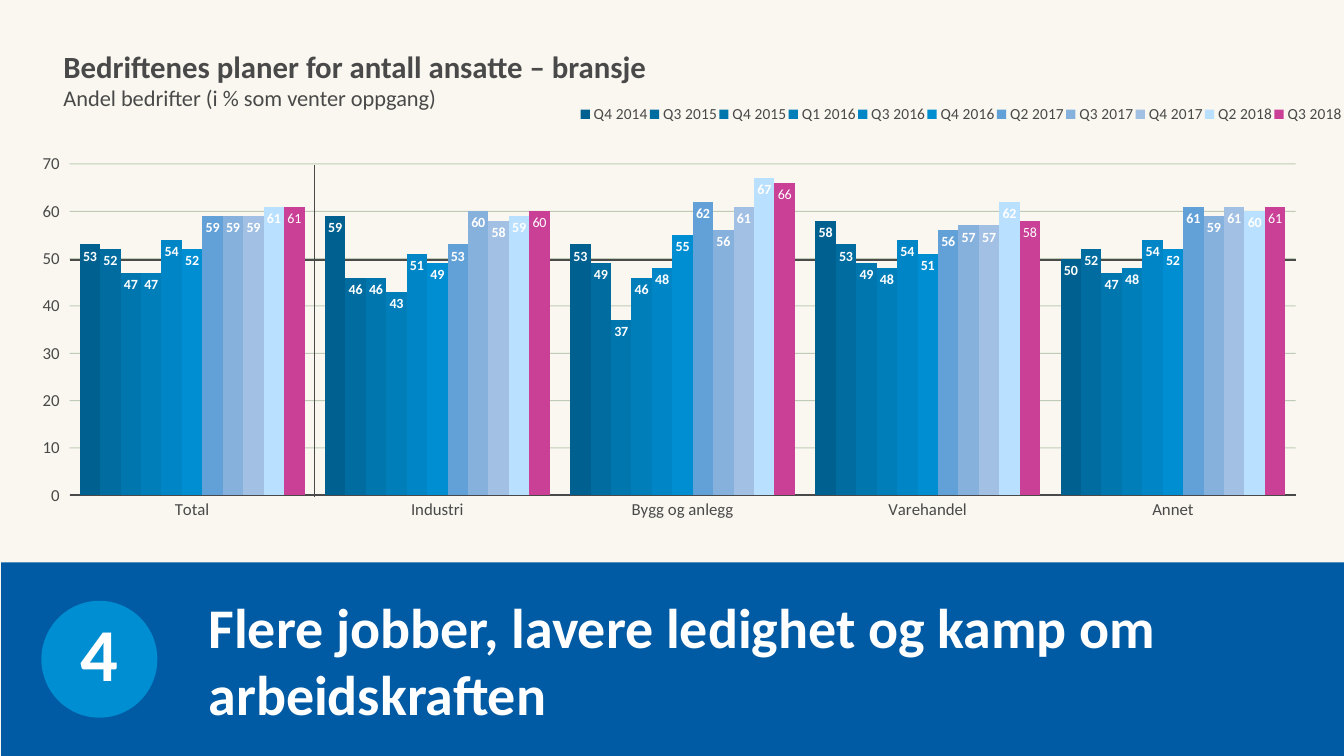
from lxml import etree
from pptx import Presentation
from pptx.chart.data import CategoryChartData
from pptx.dml.color import RGBColor
from pptx.enum import chart as ce, shapes, text
from pptx.oxml import parse_xml
from pptx.oxml.ns import qn
from pptx.util import Inches, Pt

WIDE, HIGH = Inches(13.33), Inches(7.5)
FONT = "Calibri"
HUES = {"paper": "F9F7EF", "band": "005AA4", "disc": "008ED2",
        "ink": "494949", "grid": "86A17F", "white": "FFFFFF"}
CATS = ["Total", "Industri", "Bygg og anlegg", "Varehandel", "Annet"]
QUARTERS = [
    ("Q4 2014", "00608F", (53, 59, 53, 58, 50)),
    ("Q3 2015", "006C9F", (52, 46, 49, 53, 52)),
    ("Q4 2015", "0076AE", (47, 46, 37, 49, 47)),
    ("Q1 2016", "007EBA", (47, 43, 46, 48, 48)),
    ("Q3 2016", "0086C7", (54, 51, 48, 54, 54)),
    ("Q4 2016", "008ED2", (52, 49, 55, 51, 52)),
    ("Q2 2017", "62A0D8", (59, 53, 62, 56, 61)),
    ("Q3 2017", "87B1DD", (59, 60, 56, 57, 59)),
    ("Q4 2017", "A2C0E3", (59, 58, 61, 57, 61)),
    ("Q2 2018", "BAE0FF", (61, 59, 67, 62, 60)),
    ("Q3 2018", "C94096", (61, 60, 66, 58, 61)),
]


def area(*shares):
    """Turn x, y pairs given in percent of the slide into lengths."""
    return [round(s * side / 100) for s, side in zip(shares, (WIDE, HIGH) * 2)]


def put(item, **values):
    for key, value in values.items():
        setattr(item, key, value)


def style(font, size, hue, bold=False):
    put(font, name=FONT, size=Pt(size), bold=bold)
    font.color.rgb = RGBColor.from_string(HUES[hue])


def paint(fill, hue):
    fill.solid()
    fill.fore_color.rgb = RGBColor.from_string(hue)


def stroke(line, hue, width):
    paint(line.fill, HUES[hue])
    line.width = Pt(width)


def block(slide, kind, hue, box):
    shape = slide.shapes.add_shape(kind, *area(*box))
    shape.shadow.inherit = False
    paint(shape.fill, HUES[hue])
    shape.line.fill.background()
    return shape


def rule(slide, ends):
    line = slide.shapes.add_connector(shapes.MSO_CONNECTOR.STRAIGHT, *area(*ends))
    stroke(line.line, "ink", 1.25)
    etree.SubElement(line._element.spPr, qn("a:effectLst"))


def write(frame, lines, hue, **values):
    """Fill a text frame with (words, size, bold) lines."""
    put(frame, word_wrap=True, **values)
    for i, (words, size, bold) in enumerate(lines):
        para = frame.add_paragraph() if i else frame.paragraphs[0]
        run = para.add_run()
        run.text = words
        style(run.font, size, hue, bold)


def label(slide, box, lines, hue, anchor):
    frame = slide.shapes.add_textbox(*area(*box)).text_frame
    write(frame, lines, hue, vertical_anchor=anchor,
          auto_size=text.MSO_AUTO_SIZE.SHAPE_TO_FIT_TEXT)


def place(host, box, inner=False):
    """Give a plot area or legend a fixed place in shares of the chart."""
    for old in host.findall(qn("c:layout")):
        host.remove(old)
    marks = [("layoutTarget", "inner")] if inner else []
    marks += [("xMode", "edge"), ("yMode", "edge"), *zip("xywh", box)]
    body = "".join(f'<c:{tag} val="{val}"/>' for tag, val in marks)
    space = "http://schemas.openxmlformats.org/drawingml/2006/chart"
    layout = parse_xml(f'<c:layout xmlns:c="{space}"><c:manualLayout>{body}'
                       '</c:manualLayout></c:layout>')
    host.insert(0 if inner else 1, layout)


def axes(chart):
    cat, val = chart.category_axis, chart.value_axis
    for axis in (cat, val):
        style(axis.tick_labels.font, 12, "ink")
    cat.major_tick_mark = ce.XL_TICK_MARK.NONE
    stroke(cat.format.line, "ink", 1.25)
    put(val, minimum_scale=0, maximum_scale=70, major_unit=10,
        major_tick_mark=ce.XL_TICK_MARK.OUTSIDE, has_major_gridlines=True)
    val.format.line.fill.background()
    grid = val.major_gridlines.format.line
    stroke(grid, "grid", 0.75)
    hue = val.major_gridlines._xAx.find(".//" + qn("c:majorGridlines")).find(
        ".//" + qn("a:srgbClr"))
    etree.SubElement(hue, qn("a:alpha"), val="50000")


def bars(slide, box):
    data = CategoryChartData(number_format="0")
    data.categories = CATS
    for name, _, values in QUARTERS:
        data.add_series(name, values)
    chart = slide.shapes.add_chart(
        ce.XL_CHART_TYPE.COLUMN_CLUSTERED, *area(*box), data).chart
    put(chart, has_title=False, has_legend=True)
    style(chart.font, 10, "band")
    axes(chart)
    plot = chart.plots[0]
    put(plot, gap_width=100, overlap=0, vary_by_categories=False)
    for series, (name, hue, _) in zip(plot.series, QUARTERS):
        paint(series.format.fill, hue)
        tags = series.data_labels
        put(tags, show_value=True, position=ce.XL_LABEL_POSITION.INSIDE_END)
        style(tags.font, 10, "white", name != QUARTERS[-1][0])
    put(chart.legend, position=ce.XL_LEGEND_POSITION.BOTTOM, include_in_layout=False)
    style(chart.legend.font, 11, "ink")
    place(chart.legend._element, (0.43, 0.16, 0.57, 0.06))
    place(chart._chartSpace.chart.plotArea, (0.051, 0.28, 0.913, 0.599), True)


def main():
    deck = Presentation()
    put(deck, slide_width=WIDE, slide_height=HIGH)
    slide = deck.slides.add_slide(deck.slide_layouts[6])
    paint(slide.background.fill, HUES["paper"])
    kind, anchor = shapes.MSO_SHAPE, text.MSO_ANCHOR

    block(slide, kind.RECTANGLE, "band", (0.08, 74.4, 100.5, 25.6))
    rule(slide, (5.18, 34.4, 96.4, 34.4))
    bars(slide, (0.08, 1.2, 99.92, 73.2))
    rule(slide, (23.41, 65.73, 23.41, 21.87))

    disc = block(slide, kind.OVAL, "disc", (3.08, 79.47, 8.63, 15.47)).text_frame
    write(disc, [("4", 53.3, True)], "white", vertical_anchor=anchor.MIDDLE,
          margin_left=0, margin_top=0, margin_right=0, margin_bottom=0)
    put(disc.paragraphs[0], alignment=text.PP_ALIGN.CENTER, line_spacing=Pt(53.3))

    label(slide, (14.78, 77.6, 82.07, 19.33),
          [("Flere jobber, lavere ledighet og kamp om arbeidskraften", 40, True)],
          "white", anchor.MIDDLE)
    label(slide, (3.98, 5.6, 77.34, 9.87),
          [("Bedriftenes planer for antall ansatte – bransje", 22, True),
           ("Andel bedrifter (i % som venter oppgang)", 16, False)],
          "ink", anchor.TOP)
    deck.save("out.pptx")


if __name__ == "__main__":
    main()
